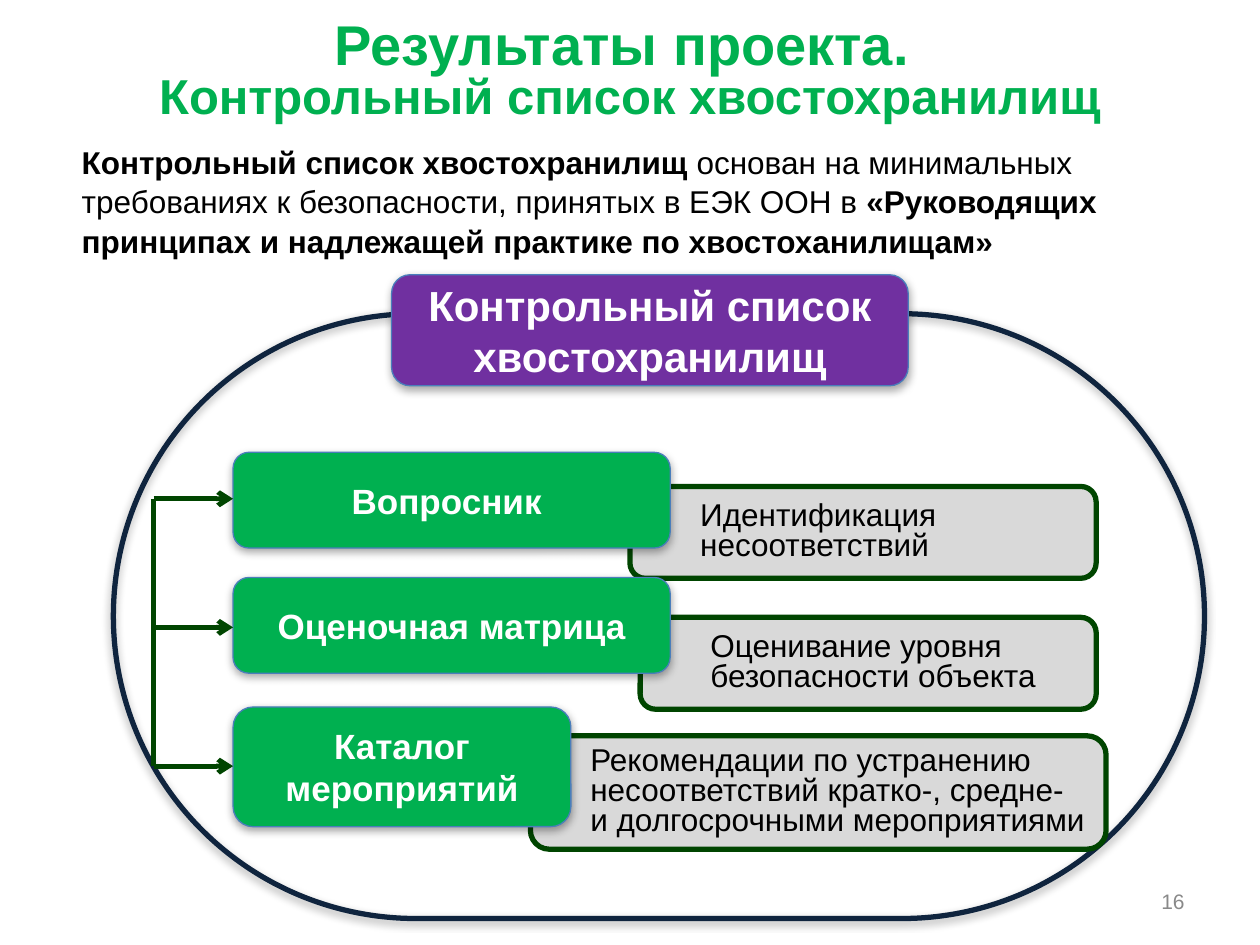
from lxml import etree
from pptx import Presentation
from pptx.dml.color import RGBColor
from pptx.enum.shapes import MSO_CONNECTOR, MSO_SHAPE
from pptx.enum.text import MSO_ANCHOR, PP_ALIGN
from pptx.oxml.ns import qn
from pptx.util import Pt

ROUNDED = MSO_SHAPE.ROUNDED_RECTANGLE
STRAIGHT = MSO_CONNECTOR.STRAIGHT
TOP, MIDDLE = MSO_ANCHOR.TOP, MSO_ANCHOR.MIDDLE
LEFT, CENTER, RIGHT = PP_ALIGN.LEFT, PP_ALIGN.CENTER, PP_ALIGN.RIGHT

GREEN = RGBColor(0x00, 0xB0, 0x50)
DARK_GREEN = RGBColor(0x00, 0x45, 0x00)
PURPLE = RGBColor(0x70, 0x30, 0xA0)
NAVY = RGBColor(0x0F, 0x24, 0x3E)
BLUE = RGBColor(0x4A, 0x7E, 0xBB)
LIGHT_GRAY = RGBColor(0xD9, 0xD9, 0xD9)
GRAY = RGBColor(0x89, 0x89, 0x89)
BLACK = RGBColor(0x00, 0x00, 0x00)
WHITE = RGBColor(0xFF, 0xFF, 0xFF)

# Tool label, its box, explanation, its box, explanation indent;
# boxes are relative to the diagram, arrow is the height of the branch
TOOLS = [
    dict(label="Вопросник ", label_box=(68.4, 101.5, 249.8, 54.7),
         note="Идентификация несоответствий",
         note_box=(295.2, 121, 266.4, 52.5), indent=30.5, arrow=128),
    dict(label="Каталог мероприятий", label_box=(68.4, 247, 193, 68.4),
         note="Рекомендации по устранению несоответствий кратко-, "
              "средне- и долгосрочными мероприятиями",
         note_box=(238.3, 263.5, 329, 64.8), indent=24, arrow=280.8),
    dict(label="Оценочная матрица", label_box=(68.4, 173, 249.8, 54.7),
         note="Оценивание уровня безопасности объекта",
         note_box=(301, 195.8, 260.6, 52.5), indent=30.5, arrow=201.5),
]


def add_run(paragraph, text, size, color, bold=False):
    run = paragraph.add_run()
    run.text = text
    run.font.name = "Arial"
    run.font.size = Pt(size)
    run.font.bold = bold
    run.font.color.rgb = color


def set_frame(shape, anchor, align):
    """Prepare a shape's text frame and return its first paragraph."""
    frame = shape.text_frame
    frame.word_wrap = True
    frame.vertical_anchor = anchor
    paragraph = frame.paragraphs[0]
    paragraph.alignment = align
    return paragraph


def add_text_box(slide, box, anchor, align):
    shape = slide.shapes.add_textbox(*map(Pt, box))
    return set_frame(shape, anchor, align)


def add_soft_shadow(shape):
    effects = shape._element.spPr.find(qn("a:effectLst"))
    shadow = etree.SubElement(effects, qn("a:outerShdw"), blurRad=str(Pt(5)),
                              dist=str(Pt(1.8)), dir="5400000", rotWithShape="0")
    color = etree.SubElement(shadow, qn("a:srgbClr"), val="000000")
    etree.SubElement(color, qn("a:alpha"), val="35000")


def add_panel(slide, origin, box, fill, line, width, shadow=False):
    """Add a rounded rectangle whose box is relative to origin."""
    left, top, box_width, height = box
    shape = slide.shapes.add_shape(ROUNDED, Pt(origin[0] + left), Pt(origin[1] + top),
                                   Pt(box_width), Pt(height))
    shape.shadow.inherit = False
    if fill is None:
        shape.fill.background()
    else:
        shape.fill.solid()
        shape.fill.fore_color.rgb = fill
    shape.line.color.rgb = line
    shape.line.width = Pt(width)
    if shadow:
        add_soft_shadow(shape)
    return shape


def add_label(slide, origin, box, fill, text, size):
    shape = add_panel(slide, origin, box, fill, BLUE, 0.75, shadow=True)
    add_run(set_frame(shape, MIDDLE, CENTER), text, size, WHITE, True)


def add_note(slide, origin, box, text, indent):
    shape = add_panel(slide, origin, box, LIGHT_GRAY, DARK_GREEN, 3)
    paragraph = set_frame(shape, MIDDLE, LEFT)
    paragraph.line_spacing = 0.8
    properties = paragraph._p.get_or_add_pPr()
    properties.set("marL", str(Pt(indent)))
    properties.set("indent", "0")
    add_run(paragraph, text, 18, BLACK)


def add_branch(slide, origin, start, end, arrow=False):
    points = [Pt(origin[i] + point[i]) for point in (start, end) for i in (0, 1)]
    connector = slide.shapes.add_connector(STRAIGHT, *points)
    connector.line.color.rgb = DARK_GREEN
    connector.line.width = Pt(2.75)
    if arrow:
        etree.SubElement(connector.line._get_or_add_ln(), qn("a:tailEnd"), type="arrow")
    etree.SubElement(connector._element.spPr, qn("a:effectLst"))


def build_title(slide, box):
    paragraph = add_text_box(slide, box, MIDDLE, CENTER)
    paragraph.line_spacing = 0.8
    add_run(paragraph, "Результаты проекта. ", 32, GREEN, True)
    paragraph.add_line_break()
    add_run(paragraph, "Контрольный список хвостохранилищ", 28, GREEN, True)


def build_intro(slide, box):
    paragraph = add_text_box(slide, box, TOP, LEFT)
    paragraph.line_spacing = 1.05
    for text, bold in (
        ("Контрольный список хвостохранилищ ", True),
        ("основан на минимальных требованиях к безопасности, "
         "принятых в ЕЭК ООН в ", False),
        ("«Руководящих принципах и надлежащей практике по хвостоханилищам»", True),
    ):
        add_run(paragraph, text, 18, BLACK, bold)


def build_diagram(slide, box):
    left, top, width, height = box
    origin = (left, top)

    # Outline and heading
    outline = add_panel(slide, origin, (0, 22.3, width, height - 22.3),
                        None, NAVY, 3, shadow=True)
    outline.adjustments[0] = 0.5
    add_label(slide, origin, (159, 0, 295.2, 63.4), PURPLE,
              "Контрольный список хвостохранилищ", 24)

    # Tools, each over its explanation
    for tool in TOOLS:
        add_note(slide, origin, tool["note_box"], tool["note"], tool["indent"])
        add_label(slide, origin, tool["label_box"], GREEN, tool["label"], 20)

    # Trunk and arrows to the tools
    trunk = 23
    heights = [tool["arrow"] for tool in TOOLS]
    add_branch(slide, origin, (trunk, min(heights)), (trunk, max(heights)))
    for tool in TOOLS:
        add_branch(slide, origin, (trunk, tool["arrow"]),
                   (tool["label_box"][0], tool["arrow"]), arrow=True)


def build_page_number(slide, box):
    add_run(add_text_box(slide, box, MIDDLE, RIGHT), "16", 12, GRAY)


def main():
    presentation = Presentation()
    presentation.slide_width, presentation.slide_height = Pt(720), Pt(540)
    slide = presentation.slides.add_slide(presentation.slide_layouts[6])
    build_title(slide, (36, 3.6, 648, 76.3))
    build_intro(slide, (39.6, 77, 641.5, 45.4))
    build_page_number(slide, (516, 500.5, 168, 28.8))
    build_diagram(slide, (64.8, 157, 623.5, 367.9))
    presentation.save("out.pptx")


if __name__ == "__main__":
    main()
